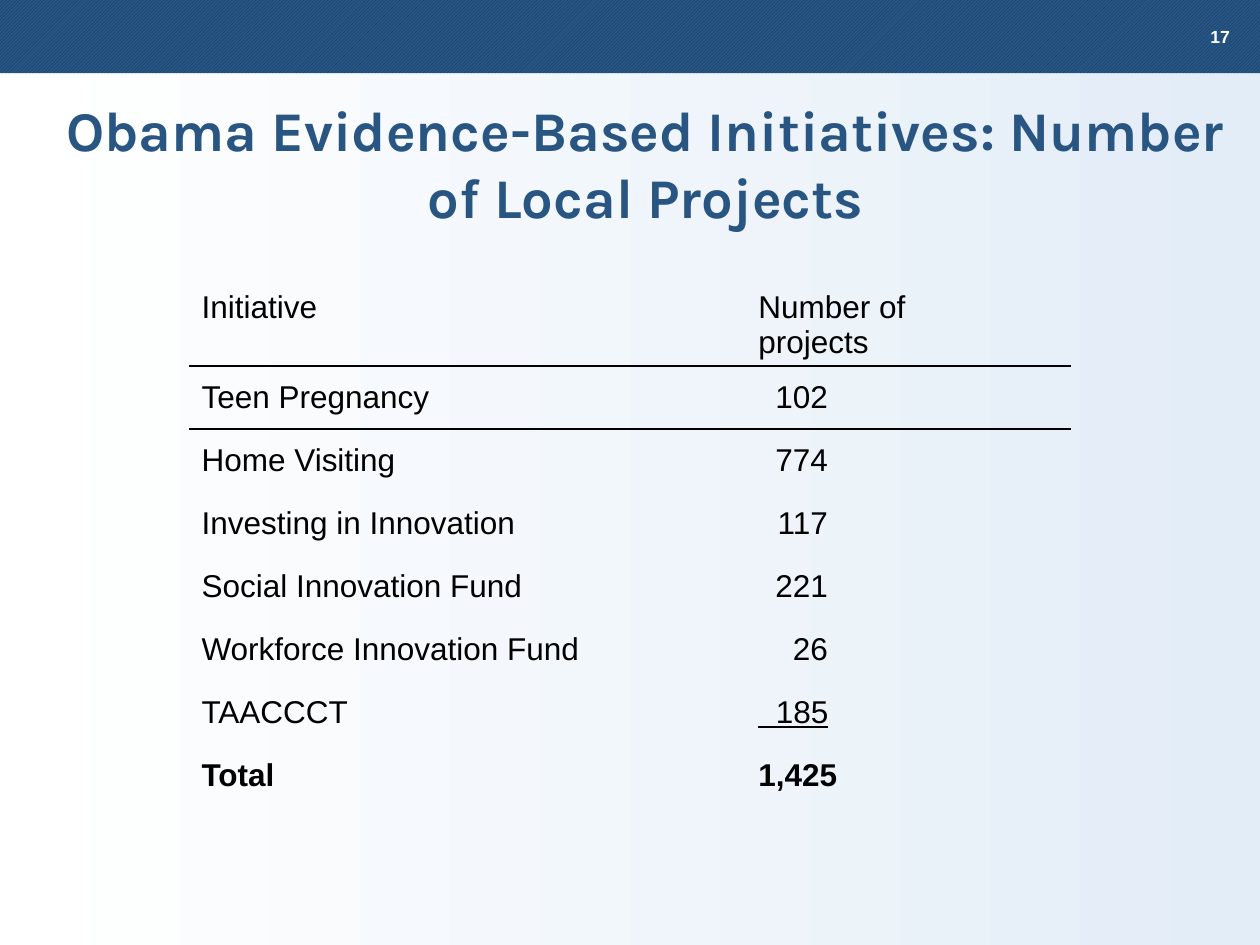
import pptx
import pptx.dml.color
import pptx.enum.dml
import pptx.enum.shapes
import pptx.enum.text
import pptx.oxml
import pptx.oxml.ns
import pptx.util

RGBColor = pptx.dml.color.RGBColor
ALIGN = pptx.enum.text.PP_ALIGN
ANCHOR = pptx.enum.text.MSO_ANCHOR

WHITE = RGBColor(0xFF, 0xFF, 0xFF)
BLACK = RGBColor(0x00, 0x00, 0x00)
PALE_BLUE = RGBColor(0xE3, 0xED, 0xF7)
BLUE = RGBColor(0x29, 0x55, 0x82)
DARK_BLUE = RGBColor(0x08, 0x38, 0x68)

COLUMNS, ROWS = 40, 30
PLAIN_TABLE_STYLE = "{2D5ABB26-0587-4C30-8999-92F81FD0307C}"

HEADINGS = ("Initiative", "Number of\nprojects")
PROJECTS = [
    ("Teen Pregnancy", "102"),
    ("Home Visiting", "774"),
    ("Investing in Innovation", "117"),
    ("Social Innovation Fund", "221"),
    ("Workforce Innovation Fund", "26"),
    ("TAACCCT", "  185"),  # the underlined spaces form the sum line
]
TOTAL = ("Total", "1,425")


class ProjectSlide:
    """One slide, measured in cells of a 40 by 30 grid."""

    body_font = "Arial"
    title_font = "Karla"

    def __init__(self, deck):
        self.unit_x = deck.slide_width / COLUMNS
        self.unit_y = deck.slide_height / ROWS
        self.slide = deck.slides.add_slide(deck.slide_layouts[5])

    def place(self, column, row, width, height):
        return (round(column * self.unit_x), round(row * self.unit_y),
                round(width * self.unit_x), round(height * self.unit_y))

    def format_text(self, frame, size, color, name=None, bold=False,
                    align=ALIGN.LEFT, underline=False):
        for paragraph in frame.paragraphs:
            paragraph.alignment = align
            font = paragraph.font
            font.name = name or self.body_font
            font.size = pptx.util.Pt(size)
            font.bold = bold
            font.underline = underline
            font.color.rgb = color

    def set_insets(self, frame, horizontal, vertical):
        frame.margin_left = frame.margin_right = pptx.util.Inches(horizontal)
        frame.margin_top = frame.margin_bottom = pptx.util.Inches(vertical)

    def background(self, left_color, right_color):
        fill = self.slide.background.fill
        fill.gradient()
        fill.gradient_angle = 0
        for stop, position, color in zip(fill.gradient_stops, (0, 1),
                                         (left_color, right_color)):
            stop.position = position
            stop.color.rgb = color

    def hatched_band(self, *area):
        band = self.slide.shapes.add_shape(
            pptx.enum.shapes.MSO_SHAPE.RECTANGLE, *self.place(*area))
        band.shadow.inherit = False
        band.line.fill.background()
        band.fill.patterned()
        band.fill.pattern = pptx.enum.dml.MSO_PATTERN.LIGHT_UPWARD_DIAGONAL
        band.fill.fore_color.rgb = DARK_BLUE
        band.fill.back_color.rgb = BLUE

    def page_number(self, number, *area):
        frame = self.slide.shapes.add_textbox(*self.place(*area)).text_frame
        frame.word_wrap = True
        self.set_insets(frame, 0.07, 0.04)
        frame.text = number
        self.format_text(frame, 10, WHITE, bold=True, align=ALIGN.RIGHT)

    def title(self, wording, *area):
        title = self.slide.shapes.title
        title.left, title.top, title.width, title.height = self.place(*area)
        frame = title.text_frame
        frame.text = wording
        frame.auto_size = pptx.enum.text.MSO_AUTO_SIZE.NONE
        frame.vertical_anchor = ANCHOR.MIDDLE
        self.set_insets(frame, 0.04, 0.04)
        self.format_text(frame, 32, BLUE, self.title_font, True, ALIGN.CENTER)

    def rule_below(self, cell):
        line = pptx.oxml.parse_xml(
            f'<a:lnB {pptx.oxml.ns.nsdecls("a")} w="12700"><a:solidFill>'
            f'<a:srgbClr val="{BLACK}"/></a:solidFill></a:lnB>')
        cell._tc.get_or_add_tcPr().insert(0, line)

    def project_table(self, entries, column_shares, *area):
        frame = self.slide.shapes.add_table(
            len(entries), len(column_shares), *self.place(*area))
        table = frame.table
        table.first_row = table.horz_banding = False
        style = table._tbl.tblPr.find(pptx.oxml.ns.qn("a:tableStyleId"))
        style.text = PLAIN_TABLE_STYLE
        for column, share in zip(table.columns, column_shares):
            column.width = round(share * self.unit_x)

        last = len(entries) - 1
        for r, entry in enumerate(entries):
            table.rows[r].height = round((2 if r else 2.62) * self.unit_y)
            for c, wording in enumerate(entry):
                cell = table.cell(r, c)
                is_addend = c == 1 and r == last - 1
                is_count = c == 1 and 0 < r < last - 1
                cell.text = wording
                cell.fill.background()
                cell.vertical_anchor = ANCHOR.MIDDLE if r else ANCHOR.TOP
                if r == 0:
                    cell.margin_bottom = 0
                if is_count:
                    cell.margin_right = pptx.util.Inches(1.93)
                self.format_text(
                    cell.text_frame, 18, BLACK, bold=r == last,
                    align=ALIGN.RIGHT if is_count else ALIGN.LEFT,
                    underline=is_addend)
                if r < 2:
                    self.rule_below(cell)


def main():
    deck = pptx.Presentation()
    deck.slide_width = pptx.util.Inches(10)
    deck.slide_height = pptx.util.Inches(7.5)

    page = ProjectSlide(deck)
    page.background(WHITE, PALE_BLUE)
    page.hatched_band(0, 0, COLUMNS, 2.32)
    page.page_number("17", 37.68, 0.66, 1.64, 0.92)
    page.title("Obama Evidence-Based Initiatives: Number of Local Projects",
               1, 3, 39, 4.32)
    page.project_table([HEADINGS, *PROJECTS, TOTAL], (17.68, 10.32),
                       6, 9, 28, 16.62)
    deck.save("out.pptx")


if __name__ == "__main__":
    main()
